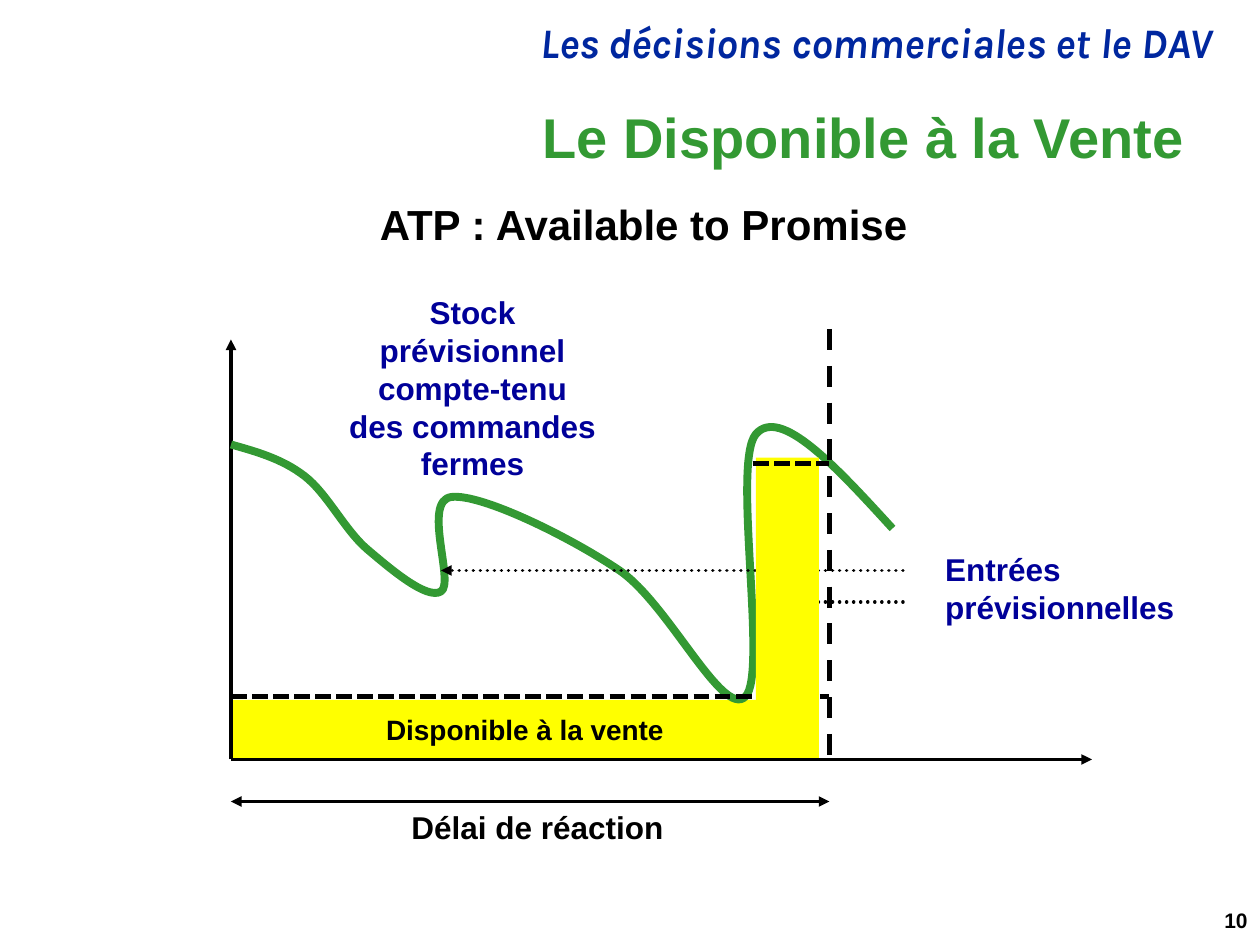
from lxml import etree
from pptx import Presentation
from pptx.dml.color import RGBColor
from pptx.enum import dml, shapes, text
from pptx.oxml import ns
from pptx.util import Pt

BLACK = RGBColor(0x00, 0x00, 0x00)
GREEN = RGBColor(0x33, 0x99, 0x33)
NAVY = RGBColor(0x00, 0x00, 0x99)
BLUE = RGBColor(0x00, 0x27, 0x9F)
YELLOW = RGBColor(0xFF, 0xFF, 0x00)

DASH = dml.MSO_LINE.DASH
SHORT_DASH = dml.MSO_LINE.SQUARE_DOT
DOTS = dml.MSO_LINE.ROUND_DOT
LEFT, CENTER, RIGHT = text.PP_ALIGN.LEFT, text.PP_ALIGN.CENTER, text.PP_ALIGN.RIGHT
TOP, MIDDLE = text.MSO_ANCHOR.TOP, text.MSO_ANCHOR.MIDDLE

# Forecast stock: start point, then two handles and an end point per curve
STOCK = [
    (0, 66),
    (14, 70), (29, 74), (42, 84),
    (55, 94), (65, 115), (78, 126),
    (91, 137), (112, 155), (120, 150),
    (128, 145), (109, 98), (126, 96),
    (143, 94), (194, 119), (222, 138),
    (250, 157), (281, 223), (294, 210),
    (307, 197), (286, 76), (300, 60),
    (314, 44), (346, 79), (378, 114),
]


def write(frame, lines, size, color, align=LEFT, anchor=TOP, font="Arial"):
    frame.vertical_anchor = anchor
    frame.text = "\n".join(lines)
    for paragraph in frame.paragraphs:
        paragraph.alignment = align
        paragraph.font.name = font
        paragraph.font.size = Pt(size)
        paragraph.font.bold = True
        paragraph.font.color.rgb = color


def add_label(slide, box, lines, size, color, wrap=False, **style):
    frame = slide.shapes.add_textbox(*map(Pt, box)).text_frame
    frame.word_wrap = wrap
    if not wrap:
        frame.auto_size = text.MSO_AUTO_SIZE.SHAPE_TO_FIT_TEXT
    write(frame, lines, size, color, **style)
    return frame.paragraphs[0]


def add_line(slide, start, end, width=2, dash=None, arrows=()):
    connector = slide.shapes.add_connector(
        shapes.MSO_CONNECTOR.STRAIGHT, *map(Pt, (*start, *end)))
    connector.line.color.rgb = BLACK
    connector.line.width = Pt(width)
    outline = connector.line._get_or_add_ln()
    if dash is not None:
        connector.line.dash_style = dash
    if dash == DOTS:
        outline.set("cap", "rnd")
    for arrow in arrows:
        etree.SubElement(outline, ns.qn("a:" + arrow), type="triangle")
    etree.SubElement(connector._element.spPr, ns.qn("a:effectLst"))


def add_bar(slide, box):
    bar = slide.shapes.add_shape(shapes.MSO_SHAPE.RECTANGLE, *map(Pt, box))
    bar.shadow.inherit = False
    bar.fill.solid()
    bar.fill.fore_color.rgb = YELLOW
    bar.line.fill.background()
    return bar


def add_curve(slide, points, color, width):
    points = [(Pt(x), Pt(y)) for x, y in points]
    builder = slide.shapes.build_freeform(*points[0])
    builder.add_line_segments(points[1:], close=False)
    curve = builder.convert_to_shape()
    curve.shadow.inherit = False
    curve.fill.background()
    curve.line.color.rgb = color
    curve.line.width = Pt(width)
    # Merge every three straight segments into one Bézier curve
    segments = list(curve._element.iter(ns.qn("a:lnTo")))
    for i in range(0, len(segments), 3):
        bezier = etree.Element(ns.qn("a:cubicBezTo"))
        segments[i].addprevious(bezier)
        for segment in segments[i:i + 3]:
            bezier.append(segment[0])
            segment.getparent().remove(segment)


def add_header(slide, left, top, width):
    section = add_label(slide, (left, top, width, 33),
                        ["Les décisions commerciales et le DAV"], 24, BLUE,
                        wrap=True, align=RIGHT, font="Karla")
    section.font.italic = True
    section.line_spacing = 0.9
    add_label(slide, (left, top + 39, width - 16, 60), ["Le Disponible à la Vente"],
              32, GREEN, wrap=True, align=RIGHT, anchor=MIDDLE)
    add_label(slide, (left + 210, top + 101, 320, 36),
              ["ATP : Available to Promise"], 24, BLACK)


def add_stock_diagram(slide, left, top, width, height):
    def at(x, y):
        return left + x, top + y

    horizon = 342  # end of the reaction time
    threshold = 210  # level of the available stock

    # Available stock
    available = add_bar(slide, (*at(0, 212), 336, height - 212))
    write(available.text_frame, ["Disponible à la vente"], 16, BLACK,
          align=CENTER, anchor=MIDDLE)

    # Axes
    add_line(slide, at(0, height), at(0, 6), arrows=["tailEnd"])
    add_line(slide, at(0, height), at(width, height), arrows=["tailEnd"])

    # Forecast stock and its limits
    add_curve(slide, [at(x, y) for x, y in STOCK], GREEN, 4.5)
    add_line(slide, at(horizon, 0), at(horizon, height), 3, DASH)
    add_line(slide, at(0, threshold), at(horizon, threshold), 3, SHORT_DASH)
    add_label(slide, (*at(60, -24), 156, 115),
              ["Stock", "prévisionnel", "compte-tenu", "des commandes", "fermes"],
              18, NAVY, align=CENTER)

    # Reaction time
    add_line(slide, at(0, height + 24), at(horizon, height + 24),
             arrows=["headEnd", "tailEnd"])
    add_label(slide, (*at(96, height + 24), 162, 29), ["Délai de réaction"], 18, BLACK)

    # Forecast receipts
    for x, y in ((120, 138), (300, 156)):
        add_line(slide, at(384, y), at(x, y), dash=DOTS, arrows=["tailEnd"])
    add_label(slide, (*at(401, 123), 150, 50), ["Entrées", "prévisionnelles"], 18, NAVY)

    # Stock available after the last receipt
    add_bar(slide, (*at(300, 73.5), 36, 138.5))
    add_line(slide, at(298.5, 77), at(horizon, 77), 3, SHORT_DASH)


def add_page_number(slide, box):
    add_label(slide, box, ["10"], 12, BLACK, wrap=True, align=RIGHT, anchor=MIDDLE)


def main():
    deck = Presentation()
    deck.slide_width, deck.slide_height = Pt(720), Pt(540)
    slide = deck.slides.add_slide(deck.slide_layouts[6])
    add_header(slide, 0, 9, 700)
    add_stock_diagram(slide, 132, 188, 492, 246)
    add_page_number(slide, (552, 511, 168, 29))
    deck.save("out.pptx")


if __name__ == "__main__":
    main()
